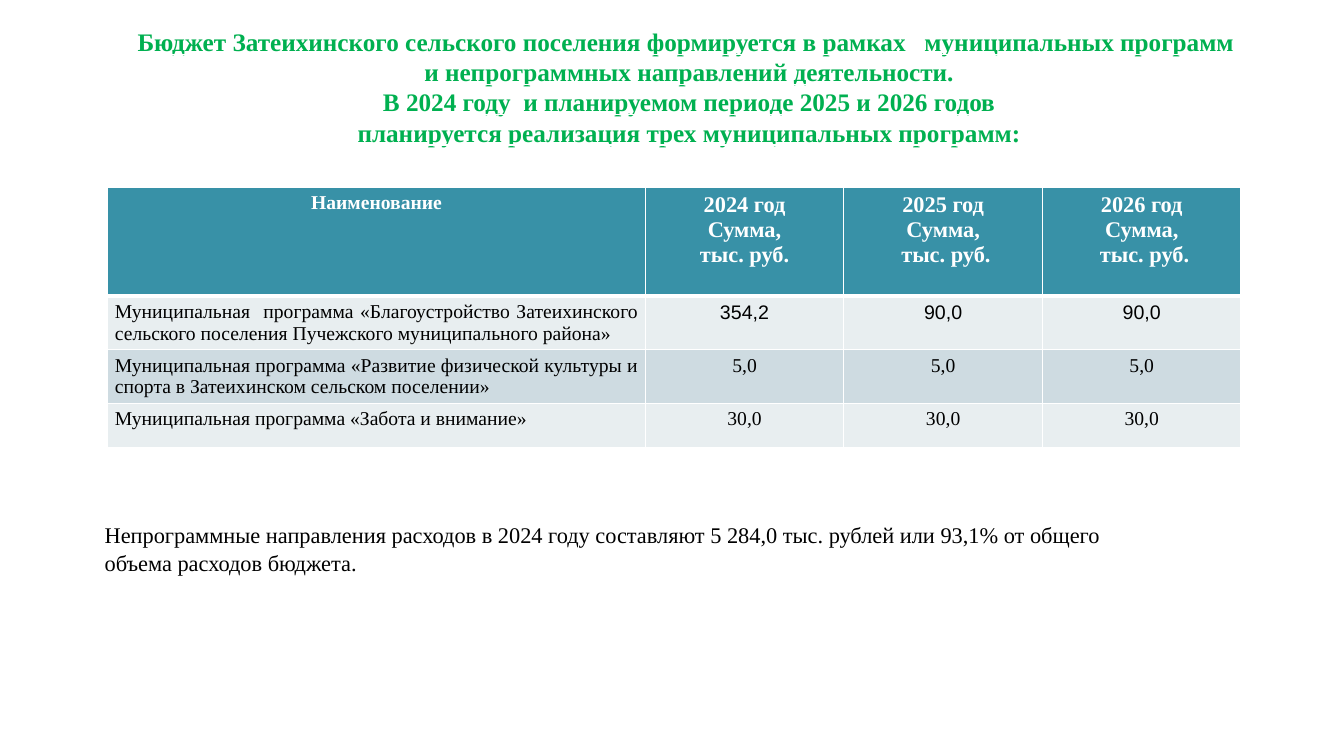
from lxml.etree import SubElement
from pptx import Presentation
from pptx.dml.color import RGBColor
from pptx.enum.text import MSO_ANCHOR as Anchor, MSO_AUTO_SIZE as AutoSize, PP_ALIGN as Align
from pptx.oxml.ns import qn
from pptx.util import Pt

PX = 9144
HEADING = [
    "Бюджет Затеихинского сельского поселения формируется в рамках   муниципальных программ ",
    "и непрограммных направлений деятельности.",
    "В 2024 году  и планируемом периоде 2025 и 2026 годов",
    "планируется реализация трех муниципальных программ:",
]
PROGRAMS = [
    ["Наименование", "2024 год\nСумма,\nтыс. руб.", "2025 год\nСумма,\n тыс. руб.",
     "2026 год\nСумма,\n тыс. руб."],
    ["Муниципальная  программа «Благоустройство Затеихинского сельского поселения "
     "Пучежского муниципального района»", "354,2", "90,0", "90,0"],
    ["Муниципальная программа «Развитие физической культуры и спорта "
     "в Затеихинском сельском поселении»", "5,0", "5,0", "5,0"],
    ["Муниципальная программа «Забота и внимание»", "30,0", "30,0", "30,0"],
]
NOTE = ("Непрограммные направления расходов в 2024 году составляют 5 284,0 тыс. рублей "
        "или 93,1% от общего объема расходов бюджета.")


def rgb(color):
    return RGBColor.from_string(color)


def add_solid(parent, color):
    fill = SubElement(parent, qn("a:solidFill"))
    SubElement(fill, qn("a:srgbClr"), val=color)


class BudgetSlide:
    """Builds the budget slide in one shared style."""

    serif, sans = "Times New Roman", "Arial"
    green, teal, white, black = "00B050", "3891A7", "FFFFFF", "000000"
    bands = ["E8EEF0", "CEDBE1"]

    def __init__(self, deck):
        self.slide = deck.slides.add_slide(deck.slide_layouts[5])

    def style(self, frame, size, color, align, bold=False, font=None):
        for paragraph in frame.paragraphs:
            paragraph.alignment = align
            for run in paragraph.runs:
                run.font.name = font or self.serif
                run.font.size = Pt(size)
                run.font.bold = bold
                run.font.color.rgb = rgb(color)

    def title(self, lines, left, top, width, height):
        heading = self.slide.shapes.title
        heading.left, heading.top = left * PX, top * PX
        heading.width, heading.height = width * PX, height * PX
        frame = heading.text_frame
        frame.text = "\n".join(lines)
        frame.word_wrap, frame.auto_size = True, AutoSize.NONE
        frame.vertical_anchor = Anchor.TOP
        self.style(frame, 18, self.green, Align.CENTER, bold=True)
        for paragraph in frame.paragraphs:
            indents = paragraph._p.get_or_add_pPr()
            indents.set("marL", str(40 * PX))
            indents.set("indent", str(-31 * PX))
            for run in paragraph.runs:
                run.font.underline = True
                props = run.font._element
                underline = SubElement(props, qn("a:uFill"))
                add_solid(underline, self.white)
                props.find(qn("a:latin")).addprevious(underline)

    def borders(self, cell, widths):
        props = cell._tc.get_or_add_tcPr()
        for position, (side, width) in enumerate(widths.items()):
            line = SubElement(props, qn(f"a:{side}"), w=str(Pt(width)))
            add_solid(line, self.white)
            props.insert(position, line)

    def table(self, rows, left, top, widths, heights):
        programs = self.slide.shapes.add_table(
            len(rows), len(widths), left * PX, top * PX,
            sum(widths) * PX, sum(heights) * PX).table
        for column, width in zip(programs.columns, widths):
            column.width = width * PX
        for r, (row, height) in enumerate(zip(rows, heights)):
            programs.rows[r].height = height * PX
            for c, text in enumerate(row):
                self.cell(programs.cell(r, c), text, r, c)

    def cell(self, cell, text, r, c):
        header, name = r == 0, c == 0
        cell.text_frame.text = text
        cell.margin_left = cell.margin_right = 7 * PX
        cell.fill.solid()
        cell.fill.fore_color.rgb = rgb(self.teal if header else self.bands[(r - 1) % 2])
        self.borders(cell, {"lnL": 0.96, "lnR": 0.96, "lnT": 3 if r == 1 else 0.96,
                            "lnB": 3 if header else 0.96})
        self.style(cell.text_frame,
                   size=16 if header and not name else 14,
                   color=self.white if header else self.black,
                   align=Align.JUSTIFY if name and not header else Align.CENTER,
                   bold=header,
                   font=self.sans if r == 1 and not name else self.serif)

    def note(self, text, left, top, width, height):
        frame = self.slide.shapes.add_textbox(
            left * PX, top * PX, width * PX, height * PX).text_frame
        frame.word_wrap = True
        frame.text = text
        frame.paragraphs[0].line_spacing = 1.07
        self.style(frame, 16, self.black, Align.LEFT)


def main():
    deck = Presentation()
    deck.slide_width, deck.slide_height = 1333 * PX, 750 * PX
    budget = BudgetSlide(deck)
    budget.title(HEADING, 94, 21, 1170, 142)
    budget.table(PROGRAMS, 107, 186, [533] + [197] * 3, [108, 53, 53, 44])
    budget.note(NOTE, 94, 510, 1073, 123)
    deck.save("out.pptx")


if __name__ == "__main__":
    main()
